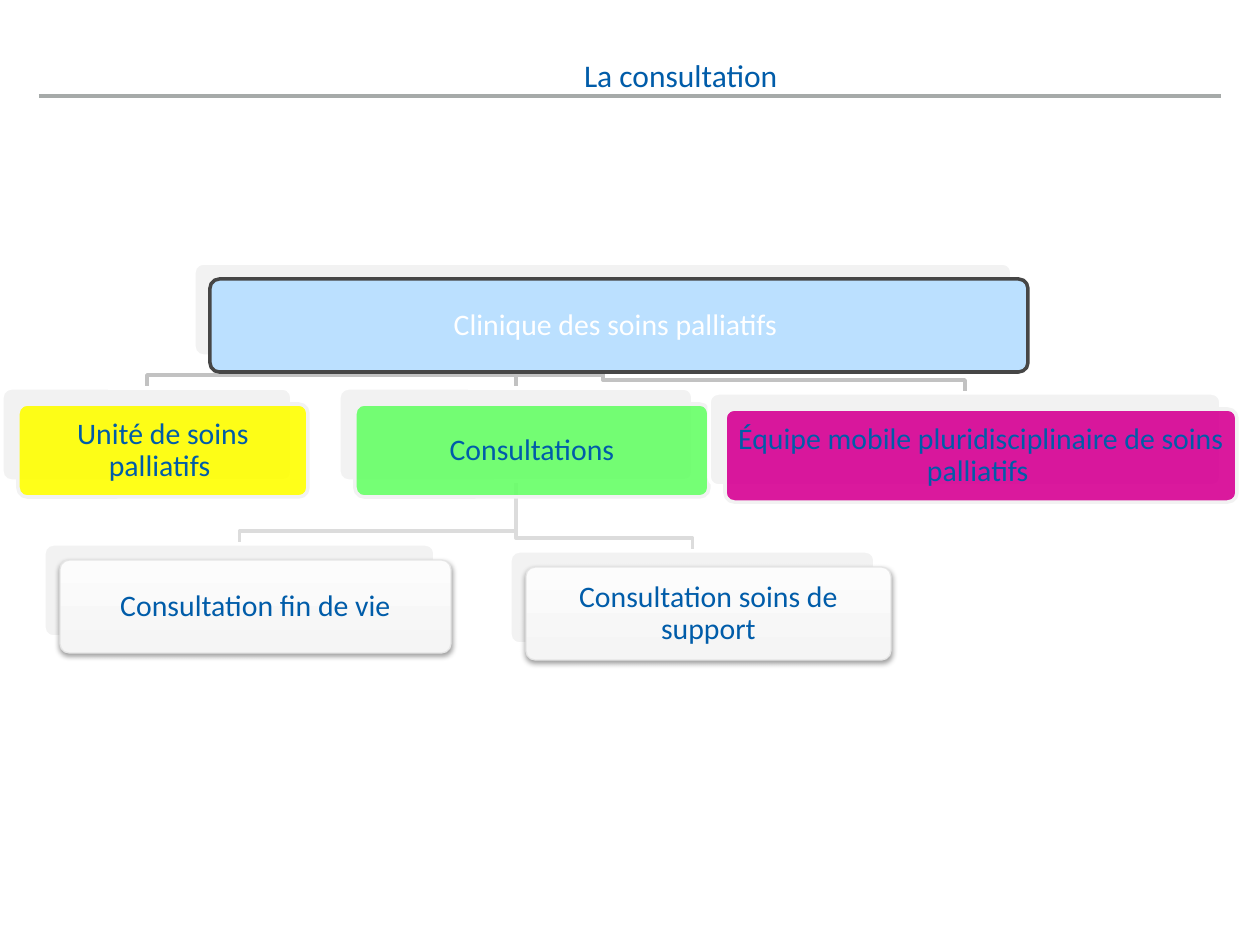
from pptx import Presentation
from pptx.dml.color import RGBColor
from pptx.enum.shapes import MSO_CONNECTOR as Conn, MSO_SHAPE as Shape
from pptx.enum.text import MSO_ANCHOR as Anchor, PP_ALIGN as Align
from pptx.oxml import parse_xml
from pptx.oxml.ns import nsdecls, qn
from pptx.util import Inches, Pt

# Content: key -> (text, parent, left, top, width, style)
TITLE = "La consultation"
CARDS = {
    "clinic": ("Clinique des soins palliatifs ", None, 194, 263, 818, "root"),
    "unit": ("Unité de soins palliatifs ", "clinic", 2, 388, 290, "yellow"),
    "visits": ("Consultations", "clinic", 339, 388, 354, "green"),
    "end": ("Consultation fin de vie", "visits", 44, 544, 391, "soft"),
    "support": ("Consultation soins de support", "visits", 510, 551, 365, "soft"),
    "team": ("Équipe mobile pluridisciplinaire de soins palliatifs ",
             "clinic", 709, 393, 512, "pink"),
}

THEME = {
    "font": "Calibri", "title": 18, "body": 17, "line": 2, "thin": 0.75,
    "text": "005CA9", "white": "FFFFFF", "pale": "F2F2F2", "rule": "A6AAA9",
    "links": {"clinic": "C2C2C2", "visits": "DCDCDC"},
    "soft": ("F5F5F5", "FCFCFC"), "soft_edge": "E5E5E5",
    "root": "BBE0FF", "root_edge": "464646",
    "yellow": "FFFF00", "green": "66FF66", "pink": "D60093",
}

# Layout
SCALE = Inches(1) / 126
HIGH, SHIFT, BEND = 93, 16, 13


def px(n):
    return round(n * SCALE)


def rgb(code):
    return RGBColor.from_string(code)


def write(frame, text, size=THEME["body"], color=THEME["text"],
          align=Align.CENTER, anchor=Anchor.MIDDLE, inset=9, space=0.9):
    frame.word_wrap = True
    frame.vertical_anchor = anchor
    frame.margin_left = frame.margin_right = px(inset)
    frame.margin_top = frame.margin_bottom = px(min(inset, 9))
    par = frame.paragraphs[0]
    par.alignment, par.line_spacing = align, space
    run = par.add_run()
    run.text = text
    run.font.name, run.font.size = THEME["font"], Pt(size)
    run.font.color.rgb = rgb(color)


def stroke(line, color, width=THEME["line"]):
    line.color.rgb, line.width = rgb(color), Pt(width)


def panel(left, top, width, fill, edge):
    box = slide.shapes.add_shape(Shape.ROUNDED_RECTANGLE, px(left), px(top),
                                 px(width), px(HIGH))
    box.adjustments[0] = 0.1
    box.shadow.inherit = False
    box.fill.solid()
    box.fill.fore_color.rgb = rgb(fill)
    stroke(box.line, edge)
    return box


def fade(box):
    """Make the fill 90 % opaque."""
    color = box.fill._xPr.find(qn("a:solidFill"))[0]
    color.append(parse_xml(f'<a:alpha {nsdecls("a")} val="90000"/>'))


def soften(box):
    """Give a pale gradient, a thin edge and a drop shadow."""
    box.fill.gradient()
    box.fill.gradient_angle = 90
    for stop, color in zip(box.fill.gradient_stops, THEME["soft"]):
        stop.color.rgb = rgb(color)
    stroke(box.line, THEME["soft_edge"], THEME["thin"])
    box._element.spPr.find(qn("a:effectLst")).append(parse_xml(
        f'<a:outerShdw {nsdecls("a")} blurRad="40000" dist="20000" '
        'dir="5400000" rotWithShape="0"><a:srgbClr val="000000">'
        '<a:alpha val="38000"/></a:srgbClr></a:outerShdw>'))


def link(parent, child):
    """Draw an elbow from the parent's bottom to the child's top."""
    _, _, left, top, width, _ = CARDS[parent]
    x, y = left + width / 2, top + HIGH
    _, _, left, end, width, _ = CARDS[child]
    mid = left + width / 2
    path = slide.shapes.build_freeform(px(x), px(y))
    path.add_line_segments([(px(x), px(end - BEND)), (px(mid), px(end - BEND)),
                            (px(mid), px(end))], close=False)
    elbow = path.convert_to_shape()
    elbow.shadow.inherit = False
    elbow.fill.background()
    stroke(elbow.line, THEME["links"][parent])


def card(text, left, top, width, style):
    panel(left, top, width, THEME["pale"], THEME["white"])
    root, soft = style == "root", style == "soft"
    box = panel(left + SHIFT, top + SHIFT, width,
                THEME["pale"] if soft else THEME[style],
                THEME["root_edge"] if root else THEME["pale"])
    if soft:
        soften(box)
    elif not root:
        fade(box)
    write(box.text_frame, text, color=THEME["white"] if root else THEME["text"])


deck = Presentation()
deck.slide_width, deck.slide_height = Inches(10), Inches(7.5)
slide = deck.slides.add_slide(deck.slide_layouts[5])

# Title and rule
title = slide.shapes.title
title.left, title.top, title.width, title.height = map(px, (571, 47, 667, 50))
write(title.text_frame, TITLE, size=THEME["title"], align=Align.LEFT,
      anchor=Anchor.TOP, inset=13, space=1.0)
rule = slide.shapes.add_connector(Conn.STRAIGHT, px(39), px(96), px(1221), px(96))
stroke(rule.line, THEME["rule"])
rule._element.spPr.append(parse_xml(f'<a:effectLst {nsdecls("a")}/>'))

# Links lie behind the cards
for key, (_, parent, *_) in CARDS.items():
    if parent:
        link(parent, key)
for text, _, *place in CARDS.values():
    card(text, *place)

deck.save("out.pptx")
